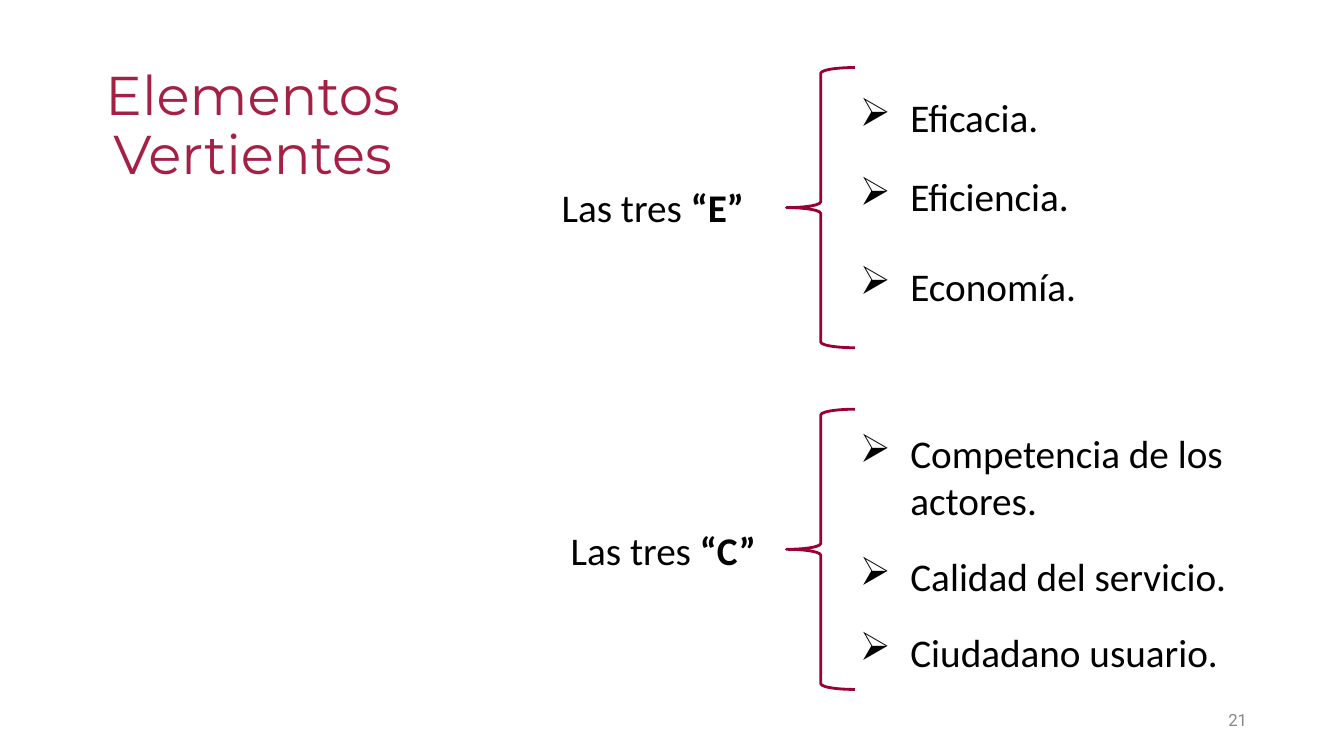
from lxml.etree import SubElement
from pptx import Presentation
from pptx.dml.color import RGBColor
from pptx.enum.shapes import MSO_SHAPE
from pptx.enum.text import MSO_ANCHOR, MSO_AUTO_SIZE, PP_ALIGN
from pptx.oxml.ns import qn
from pptx.util import Pt

PX = 9144  # 100 px to the inch
INSET = 5 * PX
INDENT = 50 * PX

TITLE_RED = RGBColor(0xA4, 0x21, 0x45)
BRACE_RED = RGBColor(0x99, 0x00, 0x33)
BLACK = RGBColor(0x00, 0x00, 0x00)
GREY = RGBColor(0x88, 0x88, 0x88)

presentation = Presentation()
presentation.slide_width = 1333 * PX
presentation.slide_height = 750 * PX
slide = presentation.slides.add_slide(presentation.slide_layouts[6])


def add_text(left, top, width, height, text, size=28, font="Calibri",
             color=BLACK, wrap=True, grow=True):
    box = slide.shapes.add_textbox(left * PX, top * PX, width * PX, height * PX)
    frame = box.text_frame
    frame.text = text
    frame.word_wrap = wrap
    frame.auto_size = MSO_AUTO_SIZE.SHAPE_TO_FIT_TEXT if grow else MSO_AUTO_SIZE.NONE
    frame.margin_left = frame.margin_right = INSET
    frame.margin_top = frame.margin_bottom = INSET
    paragraph = frame.paragraphs[0]
    for run in paragraph.runs:
        run.font.size = Pt(size)
        run.font.name = font
        run.font.color.rgb = color
    return paragraph


# Title
title = add_text(30, 63, 441, 138, "Elementos\vVertientes", 39, "Montserrat",
                 TITLE_RED, grow=False)
title.alignment = PP_ALIGN.CENTER
title.line_spacing = 0.9

# Groups: label letter, label left, top and width, brace top, items (top, height, text)
groups = [
    ("E", 552, 177, 193, 67, [
        (88, 57, "Eficacia."),
        (166, 57, "Eficiencia."),
        (255, 57, "Economía."),
    ]),
    ("C", 561, 517, 195, 406, [
        (421, 104, "Competencia de los actores."),
        (543, 57, "Calidad del servicio."),
        (618, 57, "Ciudadano usuario."),
    ]),
]

for letter, label_left, label_top, label_width, brace_top, items in groups:
    # Label with a bold letter
    label = add_text(label_left, label_top, label_width, 57, "Las tres ", wrap=False)
    bold_run = label.add_run()
    bold_run.text = f"“{letter}”"
    bold_run.font.size = Pt(28)
    bold_run.font.name = "Calibri"
    bold_run.font.bold = True
    bold_run.font.color.rgb = BLACK

    # Brace
    brace = slide.shapes.add_shape(MSO_SHAPE.LEFT_BRACE, 780 * PX, brace_top * PX,
                                   68 * PX, 278 * PX)
    brace.shadow.inherit = False
    brace.fill.background()
    brace.line.color.rgb = BRACE_RED
    brace.line.width = Pt(2)

    # Bulleted items
    for item_top, item_height, text in items:
        item = add_text(848, item_top, 394, item_height, text)
        properties = item._p.get_or_add_pPr()
        properties.set("marL", str(INDENT))
        properties.set("indent", str(-INDENT))
        SubElement(properties, qn("a:buChar")).set("char", "➢")

# Slide number
number = add_text(1213, 700, 29, 29, "21", 12, "Roboto", GREY, wrap=False)
number.alignment = PP_ALIGN.RIGHT
slide.shapes[-1].text_frame.vertical_anchor = MSO_ANCHOR.MIDDLE

presentation.save("out.pptx")
